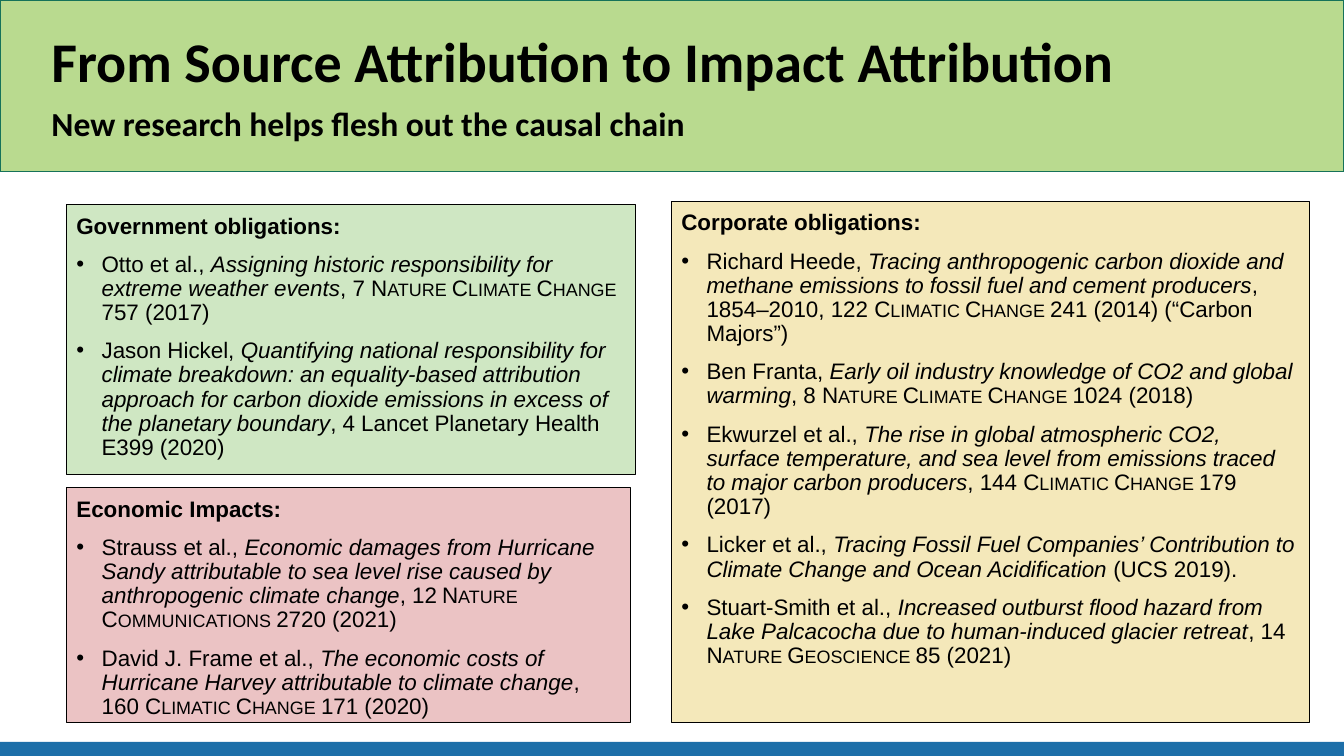
"""Build a slide on research that links emission sources to climate impacts."""
from lxml import etree
from pptx import Presentation
from pptx.dml.color import RGBColor
from pptx.enum import shapes, text
from pptx.oxml import ns
from pptx.util import Inches, Pt

COLOURS = {
    "black": "000000", "footer": "1D6FA9", "header": "B9DA8F", "header line": "157259",
    "government": "CFE7C3", "corporate": "F4E8BA", "economic": "EBC3C4",
}

PANELS = [
    ("Government obligations:", "government", (0.66, 2.03, 5.64, 2.68), [
        ("Otto et al., ", "Assigning historic responsibility for extreme weather events",
         ", 7 ", "Nature Climate Change ", "757 (2017)"),
        ("Jason Hickel, ", "Quantifying national responsibility for climate breakdown: an "
         "equality-based attribution approach for carbon dioxide emissions in excess of the "
         "planetary boundary", ", 4 Lancet Planetary Health E399 (2020)", "", ""),
    ]),
    ("Corporate obligations:", "corporate", (6.66, 2, 6.33, 5.17), [
        ("Richard Heede, ", "Tracing anthropogenic carbon dioxide and methane emissions to "
         "fossil fuel and cement producers", ", 1854–2010, 122 ", "Climatic Change ",
         "241 (2014) (“Carbon Majors”)"),
        ("Ben Franta, ", "Early oil industry knowledge of CO2 and global warming",
         ", 8 ", "Nature Climate Change ", "1024 (2018)"),
        ("Ekwurzel et al., ", "The rise in global atmospheric CO2, surface temperature, and "
         "sea level from emissions traced to major carbon producers",
         ", 144 ", "Climatic Change ", "179 (2017)"),
        ("Licker et al., ", "Tracing Fossil Fuel Companies’ Contribution to Climate Change "
         "and Ocean Acidification ", "(UCS 2019).", "", ""),
        ("Stuart-Smith et al., ", "Increased outburst flood hazard from Lake Palcacocha due "
         "to human-induced glacier retreat", ", 14 ", "Nature Geoscience ", "85 (2021)"),
    ]),
    ("Economic Impacts:", "economic", (0.66, 4.84, 5.59, 2.33), [
        ("Strauss et al., ", "Economic damages from Hurricane Sandy attributable to sea level "
         "rise caused by anthropogenic climate change", ", 12", " Nature Communications ",
         "2720 (2021)"),
        ("David J. Frame et al., ", "The economic costs of Hurricane Harvey attributable to "
         "climate change", ", 160 ", "Climatic Change ", "171 (2020)"),
    ]),
]


def add_box(box, fill, line=None, width=0.75):
    """Add a filled rectangle, outlined when a line colour is given."""
    shape = slide.shapes.add_shape(shapes.MSO_SHAPE.RECTANGLE, *map(Inches, box))
    shape.shadow.inherit = False
    shape.fill.solid()
    shape.fill.fore_color.rgb = RGBColor.from_string(COLOURS[fill])
    if line:
        shape.line.color.rgb = RGBColor.from_string(COLOURS[line])
        shape.line.width = Pt(width)
    else:
        shape.line.fill.background()
    return shape


def format_run(run, font_name, size, bold=False):
    """Set the font, size, weight and black colour of a run."""
    run.font.name = font_name
    run.font.size = Pt(size)
    run.font.bold = bold
    run.font.color.rgb = RGBColor.from_string(COLOURS["black"])


presentation = Presentation()
presentation.slide_width = Inches(13.33)
presentation.slide_height = Inches(7.5)
slide = presentation.slides.add_slide(presentation.slide_layouts[1])
title, subtitle = slide.placeholders

footer = add_box((0, 7.36, 13.33, 0.14), "footer")
header = add_box((0, 0, 13.33, 1.7), "header", "header line", 1)
for band in (footer, header):
    title._element.addprevious(band._element)

HEADINGS = [
    (title, "From Source Attribution to Impact Attribution", 0.15, 0.97, 40,
     text.MSO_ANCHOR.MIDDLE),
    (subtitle, "New research helps flesh out the causal chain", 1.02, 0.68, 24,
     text.MSO_ANCHOR.TOP),
]
for placeholder, wording, top, height, size, anchor in HEADINGS:
    placeholder.left, placeholder.top = Inches(0.41), Inches(top)
    placeholder.width, placeholder.height = Inches(12.01), Inches(height)
    frame = placeholder.text_frame
    frame.text = wording
    frame.auto_size = text.MSO_AUTO_SIZE.NONE
    frame.vertical_anchor = anchor
    paragraph = frame.paragraphs[0]
    paragraph.alignment = text.PP_ALIGN.LEFT
    paragraph.line_spacing = 0.9
    paragraph.space_before = Pt(0)
    properties = paragraph._p.get_or_add_pPr()
    properties.set("marL", "0")
    properties.set("indent", "0")
    etree.SubElement(properties, ns.qn("a:buNone"))
    format_run(paragraph.runs[0], "Calibri", size, bold=True)

for heading, fill, box, citations in PANELS:
    frame = add_box(box, fill, "black").text_frame
    frame.word_wrap = True
    frame.vertical_anchor = text.MSO_ANCHOR.TOP
    frame.margin_left = frame.margin_right = frame.margin_top = Inches(0.1)
    frame.margin_bottom = Inches(0.05)
    frame.text = heading
    paragraph = frame.paragraphs[0]
    paragraph.alignment = text.PP_ALIGN.LEFT
    paragraph.line_spacing = 0.9
    format_run(paragraph.runs[0], "Arial", 16, bold=True)

    for authors, work, volume, journal, pages in citations:
        paragraph = frame.add_paragraph()
        paragraph.alignment = text.PP_ALIGN.LEFT
        paragraph.line_spacing = 0.9
        paragraph.space_before = Pt(10)
        properties = paragraph._p.get_or_add_pPr()
        properties.set("marL", str(Inches(0.25)))
        properties.set("indent", str(Inches(-0.25)))
        etree.SubElement(properties, ns.qn("a:buFont")).set("typeface", "Arial")
        etree.SubElement(properties, ns.qn("a:buChar")).set("char", "•")
        for part in filter(None, (authors, work, volume, journal, pages)):
            run = paragraph.add_run()
            run.text = part
            format_run(run, "Arial", 16)
            run.font.italic = part == work
            if part == journal:
                run.font._element.set("cap", "small")

presentation.save("out.pptx")
